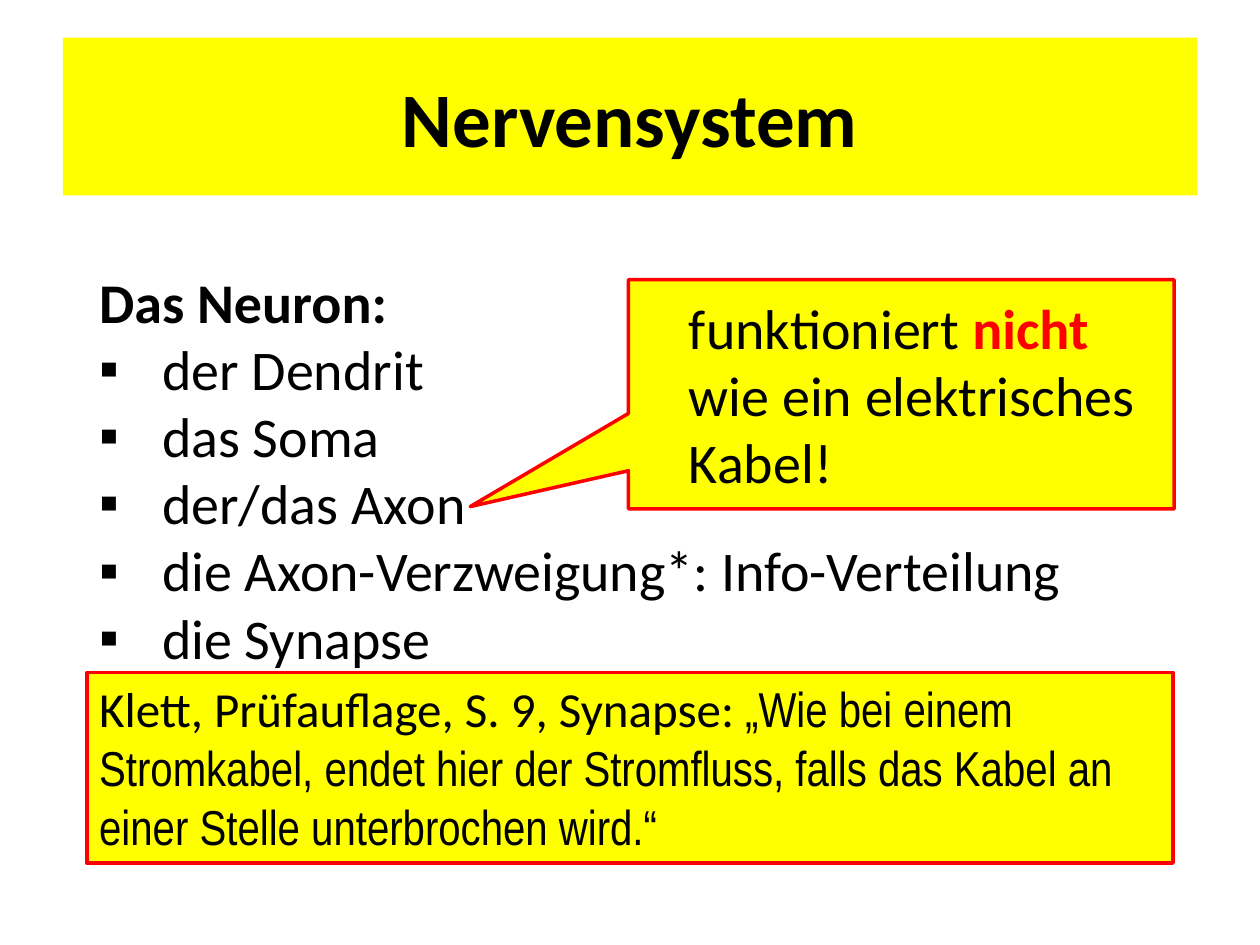
from dataclasses import dataclass
from typing import Optional

from lxml.etree import SubElement
from pptx import Presentation
from pptx.dml.color import RGBColor
from pptx.enum.shapes import MSO_SHAPE as Form
from pptx.enum.text import MSO_ANCHOR as Anchor, PP_ALIGN as Align
from pptx.oxml.ns import qn
from pptx.util import Cm, Pt

YELLOW = RGBColor(0xFF, 0xFF, 0x00)
RED = RGBColor(0xFF, 0x00, 0x00)
BLACK = RGBColor(0x00, 0x00, 0x00)


@dataclass
class Box:
    left: float
    top: float
    width: float
    height: float
    form: Optional[Form] = None
    edge: bool = False

    def place(self):
        return [Cm(n) for n in (self.left, self.top, self.width, self.height)]


@dataclass
class Run:
    text: str
    bold: bool = False
    color: RGBColor = BLACK
    face: str = "Calibri"


def draw(slide, box: Box):
    if box.form is None:
        return slide.shapes.add_textbox(*box.place())
    shape = slide.shapes.add_shape(box.form, *box.place())
    shape.shadow.inherit = False
    shape.fill.solid()
    shape.fill.fore_color.rgb = YELLOW
    if box.edge:
        shape.line.color.rgb = RED
        shape.line.width = Pt(2)
    else:
        shape.line.fill.background()
    return shape


def add_bullet(para) -> None:
    props = para._p.get_or_add_pPr()
    props.set("marL", str(Cm(1.27)))
    props.set("indent", str(Cm(-1.27)))
    SubElement(props, qn("a:buFont")).set("typeface", "Arial")
    SubElement(props, qn("a:buChar")).set("char", "▪")


def write(shape, lines: list[list[Run]], *, size: int, align=Align.LEFT,
          anchor=Anchor.TOP, listed: bool = False) -> None:
    frame = shape.text_frame
    frame.word_wrap = True
    frame.vertical_anchor = anchor
    for row, runs in enumerate(lines):
        para = frame.add_paragraph() if row else frame.paragraphs[0]
        para.alignment = align
        if listed and row:
            add_bullet(para)
        for part in runs:
            run = para.add_run()
            run.text = part.text
            font = run.font
            font.name, font.size, font.bold = part.face, Pt(size), part.bold
            font.color.rgb = part.color


def main() -> None:
    deck = Presentation()
    deck.slide_width, deck.slide_height = Cm(25.4), Cm(19.05)
    slide = deck.slides.add_slide(deck.slide_layouts[6])

    title = draw(slide, Box(1.27, 0.76, 22.86, 3.18, Form.RECTANGLE))
    write(title, [[Run("Nervensystem", bold=True)]], size=44,
          align=Align.CENTER, anchor=Anchor.MIDDLE)

    parts = ["der Dendrit", "das Soma", "der/das Axon",
             "die Axon-Verzweigung*: Info-Verteilung", "die Synapse"]
    body = draw(slide, Box(1.75, 5.26, 21.9, 11.2))
    write(body, [[Run("Das Neuron:", bold=True)]] + [[Run(p)] for p in parts],
          size=32, listed=True)

    callout = draw(slide, Box(12.67, 5.64, 11, 4.62,
                              Form.RECTANGULAR_CALLOUT, edge=True))
    callout.adjustments[0], callout.adjustments[1] = -0.79, 0.49
    remark = draw(slide, Box(13.64, 5.79, 10.24, 4.37))
    write(remark, [[Run("funktioniert "), Run("nicht", bold=True, color=RED),
                    Run(" wie ein elektrisches Kabel!")]], size=32)

    quote = draw(slide, Box(1.75, 13.56, 21.9, 3.84, Form.RECTANGLE, edge=True))
    write(quote, [[Run("Klett, Prüfauflage, S. 9, Synapse: "),
                   Run("„Wie bei einem Stromkabel, endet hier der Stromfluss, "
                       "falls das Kabel an einer Stelle unterbrochen wird.“",
                       face="Arial Narrow")]], size=28)

    deck.save("out.pptx")


if __name__ == "__main__":
    main()
